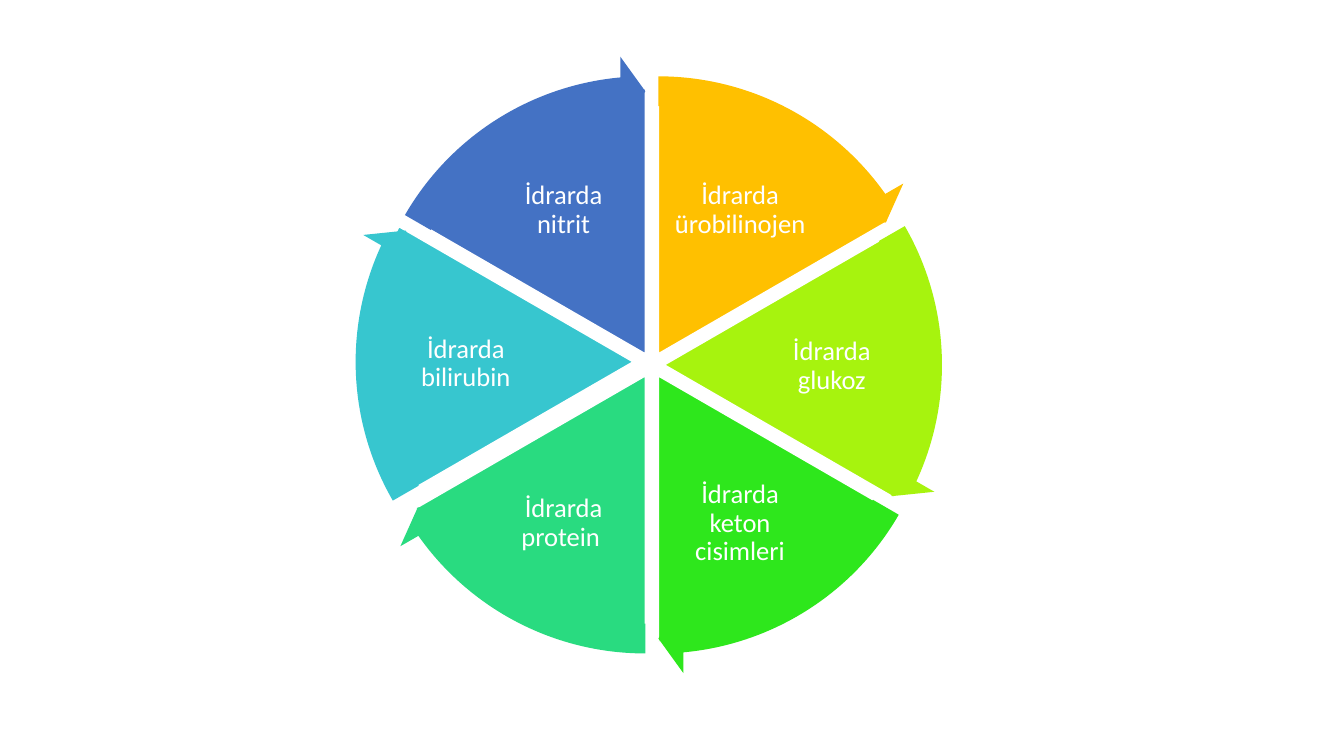
from pptx import Presentation
from pptx.dml.color import RGBColor
from pptx.enum.shapes import MSO_SHAPE
from pptx.enum.text import MSO_ANCHOR, PP_ALIGN
from pptx.util import Pt

PX = 9144  # EMU per px, 100 px to the inch
COLORS = {
    "white": "FFFFFF",
    "amber": "FFC000",
    "lime": "A7F30E",
    "green": "2EE71C",
    "mint": "29DB80",
    "teal": "37C6CF",
    "blue": "4472C4",
}
# Angles are in the unit of shape adjustments: a full turn is 216.
TURN = 216
TOP = 162
STEP = TURN // 6
ARROW_HEAD = 3.28
PIE_SIZE = 526
ARROW_SIZE = 592

# text, colour, centre of the slice, height of the pie, box of the label
SLICES = [
    ("İdrarda ürobilinojen", "amber", (653, 351), PIE_SIZE, (665, 155, 138, 107)),
    ("İdrarda glukoz", "lime", (659, 362), PIE_SIZE, (753, 312, 144, 103)),
    ("İdrarda keton cisimleri", "green", (653, 373), PIE_SIZE, (665, 466, 138, 107)),
    ("İdrarda protein ", "mint", (640, 373), PIE_SIZE, (490, 466, 138, 107)),
    ("İdrarda bilirubin", "teal", (628, 359), 572, (390, 305, 144, 112)),
    ("İdrarda nitrit", "blue", (640, 351), PIE_SIZE, (490, 155, 138, 107)),
]


def color(name):
    return RGBColor.from_string(COLORS[name])


class WheelPage:
    """Draws the parts of the wheel on one slide in a shared style."""

    font = "Calibri"
    font_size = 19
    inset = 3

    def __init__(self, page):
        self.shapes = page.shapes

    def centred_shape(self, kind, center, width, height, fill, adjustments):
        x, y = center
        box = (x - width // 2, y - height // 2, width, height)
        shape = self.shapes.add_shape(kind, *(value * PX for value in box))
        for index, value in enumerate(adjustments):
            shape.adjustments[index] = value
        shape.shadow.inherit = False
        shape.fill.solid()
        shape.fill.fore_color.rgb = color(fill)
        return shape

    def slice(self, center, height, fill, start, end):
        pie = self.centred_shape(MSO_SHAPE.PIE, center, PIE_SIZE, height, fill, (start, end))
        pie.line.color.rgb = color("white")
        pie.line.width = Pt(1)

    def arrow(self, center, fill, start, end):
        """Draw the thin arrow along the rim of a slice."""
        tip = (end - ARROW_HEAD) % TURN
        arrow = self.centred_shape(
            MSO_SHAPE.CIRCULAR_ARROW, center, ARROW_SIZE, ARROW_SIZE, fill,
            (0.05, ARROW_HEAD, tip, start, 0.06))
        arrow.line.fill.background()

    def label(self, text, box, *, size=font_size, fill="white"):
        frame = self.shapes.add_textbox(*(value * PX for value in box)).text_frame
        frame.word_wrap = True
        frame.vertical_anchor = MSO_ANCHOR.MIDDLE
        frame.margin_left = frame.margin_right = self.inset * PX
        frame.margin_top = frame.margin_bottom = self.inset * PX
        para = frame.paragraphs[0]
        para.alignment = PP_ALIGN.CENTER
        para.line_spacing = 0.9
        span = para.add_run()
        span.text = text
        span.font.name = self.font
        span.font.size = Pt(size)
        span.font.color.rgb = color(fill)


def main():
    deck = Presentation()
    deck.slide_width, deck.slide_height = 1333 * PX, 750 * PX
    wheel = WheelPage(deck.slides.add_slide(deck.slide_layouts[6]))

    angles = [((TOP + i * STEP) % TURN, (TOP + (i + 1) * STEP) % TURN)
              for i in range(len(SLICES))]
    for (text, fill, center, height, box), (start, end) in zip(SLICES, angles):
        wheel.slice(center, height, fill, start, end)
        wheel.label(text, box)
    for (_, fill, center, _, _), (start, end) in zip(SLICES, angles):
        wheel.arrow(center, fill, start, end)

    deck.save("out.pptx")


if __name__ == "__main__":
    main()
